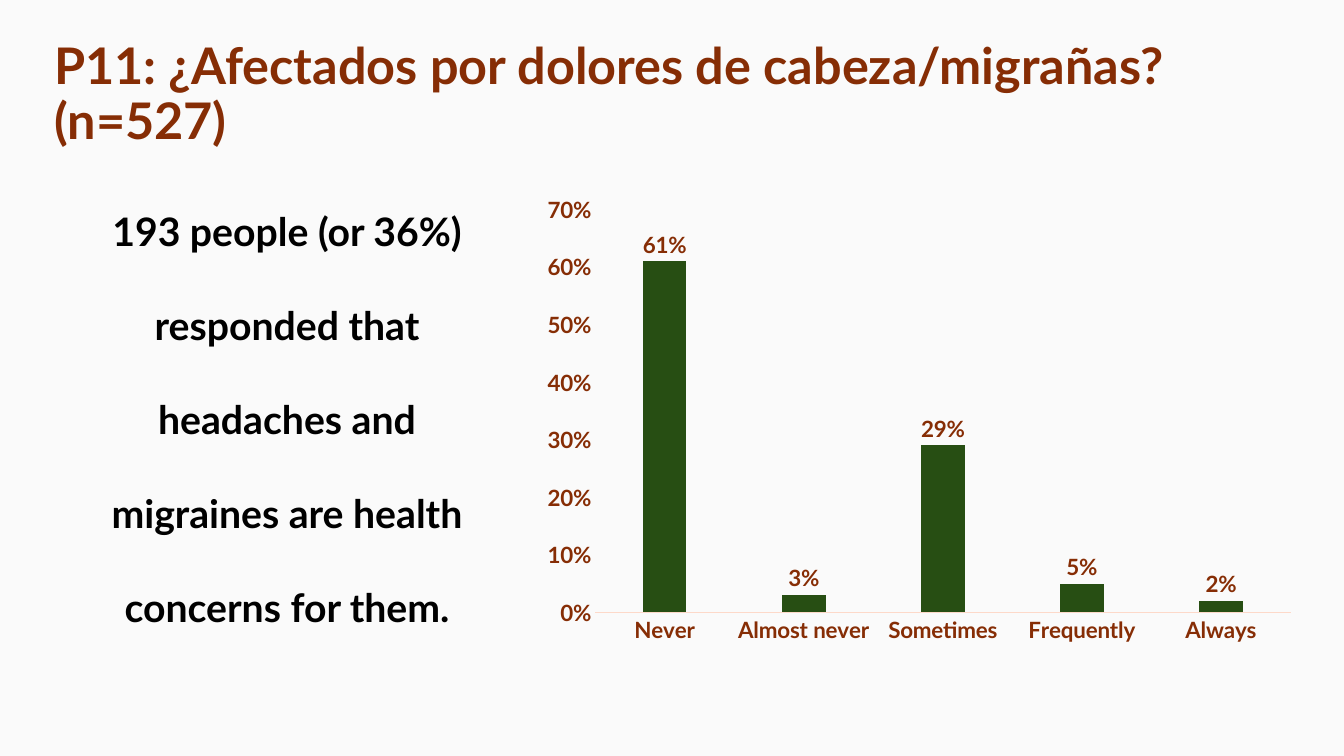
from pptx import Presentation
from pptx.chart.data import CategoryChartData
from pptx.dml.color import RGBColor
from pptx.enum.chart import XL_CHART_TYPE as Kind, XL_LABEL_POSITION as Spot, XL_TICK_MARK as Tick
from pptx.enum.text import MSO_ANCHOR as Anchor, MSO_AUTO_SIZE as Fit, PP_ALIGN as Align
from pptx.util import Pt

TITLE = "P11: ¿Afectados por dolores de cabeza/migrañas? (n=527)"
BODY = "193 people (or 36%) responded that headaches and migraines are health concerns for them."
SHARES = {"Never": 0.61, "Almost never": 0.03, "Sometimes": 0.29, "Frequently": 0.05, "Always": 0.02}

SIZE = (1344, 756)
TITLE_BOX = (54, 56, 1269, 99)
BODY_BOX = (75, 155, 424, 546)
CHART_BOX = (532, 187, 774, 465)

FACE = "Lato"
PAPER = RGBColor(0xFA, 0xFA, 0xFA)
RUST = RGBColor(0x86, 0x2D, 0x05)
BLACK = RGBColor(0, 0, 0)
GREEN = RGBColor(0x27, 0x4E, 0x13)
PEACH = RGBColor(0xFD, 0xD9, 0xC9)


def emu(*px):
    """Turn px lengths into EMU."""
    return [round(n * 914400 / 100.8) for n in px]


def style(font, size, color):
    """Set the bold face of the slide."""
    font.name, font.size, font.bold = FACE, Pt(size), True
    font.color.rgb = color


def write(shape, text, size, color, align=Align.LEFT, space=1.0, anchor=Anchor.TOP, pad=(10, 5)):
    """Put formatted text into a shape."""
    frame = shape.text_frame
    frame.word_wrap = True
    frame.auto_size = Fit.NONE
    frame.vertical_anchor = anchor
    frame.margin_left = frame.margin_right = emu(pad[0])[0]
    frame.margin_top = frame.margin_bottom = emu(pad[1])[0]
    para = frame.paragraphs[0]
    para.alignment, para.line_spacing = align, space
    run = para.add_run()
    run.text = text
    style(run.font, size, color)


def plot(slide):
    """Add the column chart of answers."""
    data = CategoryChartData(number_format="0%")
    data.categories = list(SHARES)
    data.add_series("Series 1", list(SHARES.values()))
    chart = slide.shapes.add_chart(Kind.COLUMN_CLUSTERED, *emu(*CHART_BOX), data).chart
    chart.has_legend = chart.has_title = False
    style(chart.font, 16, RUST)

    for axis in (chart.category_axis, chart.value_axis):
        axis.major_tick_mark = axis.minor_tick_mark = Tick.NONE
        axis.has_major_gridlines = False
        style(axis.tick_labels.font, 16, RUST)
    base = chart.category_axis.format.line
    base.color.rgb, base.width = PEACH, Pt(0.75)
    scale = chart.value_axis
    scale.format.line.fill.background()
    scale.minimum_scale, scale.maximum_scale, scale.major_unit = 0, 0.7, 0.1
    scale.tick_labels.number_format = "0%"
    scale.tick_labels.number_format_is_linked = False

    bars = chart.plots[0]
    bars.gap_width, bars.overlap, bars.vary_by_categories = 219, -27, False
    fill = bars.series[0].format.fill
    fill.solid()
    fill.fore_color.rgb = GREEN
    bars.has_data_labels = True
    tags = bars.data_labels
    tags.show_value, tags.position = True, Spot.OUTSIDE_END
    tags.number_format, tags.number_format_is_linked = "0%", False
    style(tags.font, 16, RUST)


def main():
    """Build and save the slide."""
    deck = Presentation()
    deck.slide_width, deck.slide_height = emu(*SIZE)
    slide = deck.slides.add_slide(deck.slide_layouts[5])
    back = slide.background.fill
    back.solid()
    back.fore_color.rgb = PAPER

    title = slide.shapes.title
    title.left, title.top, title.width, title.height = emu(*TITLE_BOX)
    write(title, TITLE, 36, RUST, space=0.9, anchor=Anchor.BOTTOM, pad=(0, 5))
    body = slide.shapes.add_textbox(*emu(*BODY_BOX))
    write(body, BODY, 28, BLACK, align=Align.CENTER, space=2.0)
    plot(slide)
    deck.save("out.pptx")


if __name__ == "__main__":
    main()
